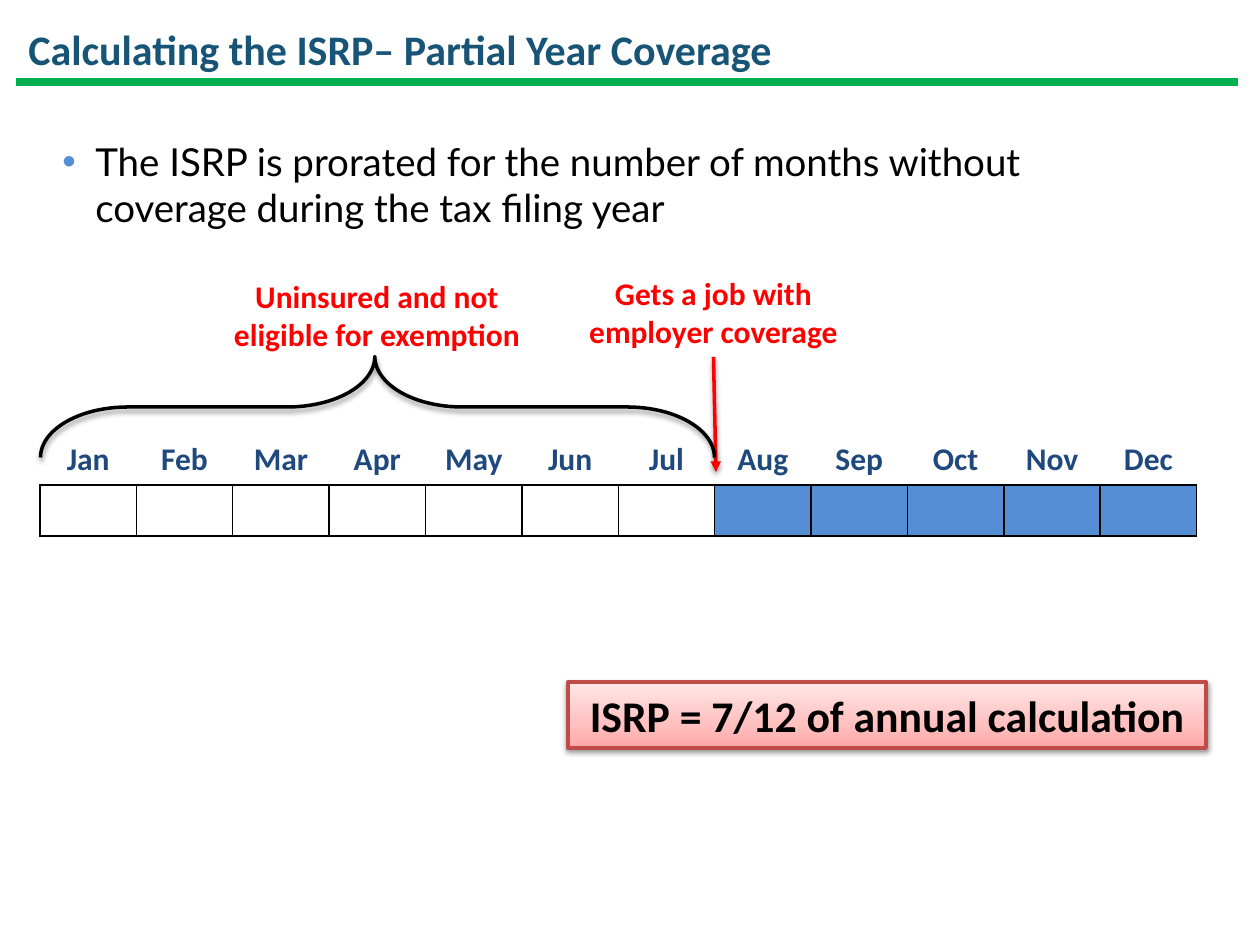
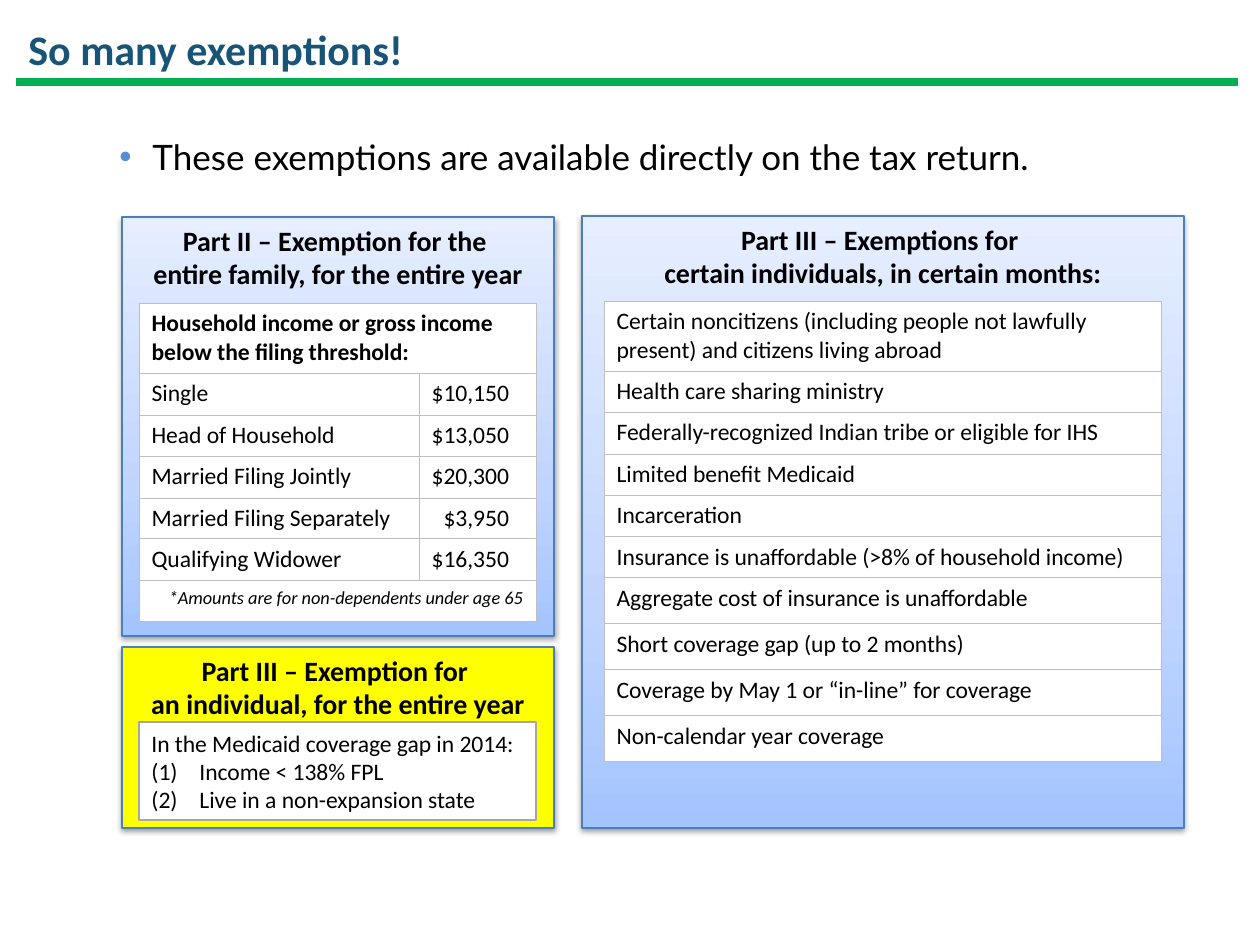
from dataclasses import dataclass

from lxml.etree import SubElement
from pptx import Presentation
from pptx.dml.color import RGBColor
from pptx.enum.shapes import MSO_CONNECTOR as Line, MSO_SHAPE as Preset
from pptx.enum.text import MSO_ANCHOR as Anchor, PP_ALIGN as Align
from pptx.oxml.ns import qn
from pptx.util import Pt

EMU_PER_PX = 914400 / 126


@dataclass(frozen=True)
class Type:
    size: float
    color: str = "000000"
    bold: bool = False
    italic: bool = False
    font: str = "Calibri"


@dataclass(frozen=True)
class Theme:
    title = Type(24, "175475", bold=True)
    lead = Type(22, font="Lato")
    short_lead = Type(20, font="Lato")
    month = Type(18, "1F497D", bold=True)
    caption = Type(18, "FF0000", bold=True)
    result = Type(25, bold=True)
    heading = Type(16, bold=True)
    entry = Type(13.5)
    entry_bold = Type(13.5, bold=True)
    footnote = Type(10.5, italic=True)
    rule = "00B050"
    bullet = "558ED5"
    bullet_font = "Arial"
    covered = "558ED5"
    ink = "000000"
    arrow = "FF0000"
    white = "FFFFFF"
    yellow = "FFFF00"
    panel_line = "4B7EBC"
    note_line = "A6A6A6"
    grid = "BFBFBF"
    result_line = "BF4C48"
    red_fade = ((0, "FFA6A5"), (35, "FFC0BF"), (100, "FFE7E7"))
    blue_fade = ((0, "A4C4FF"), (35, "BFD4FF"), (100, "E6EEFF"))


THEME = Theme()
MONTHS = "Jan Feb Mar Apr May Jun Jul Aug Sep Oct Nov Dec".split()
UNINSURED_MONTHS = 7
THRESHOLDS = [
    ("Single", "$10,150"),
    ("Head of Household", "$13,050"),
    ("Married Filing Jointly", "$20,300"),
    ("Married Filing Separately", "$3,950"),
    ("Qualifying Widower", "$16,350"),
]
MONTHLY_EXEMPTIONS = [
    "Certain noncitizens (including people not lawfully present) and citizens living abroad",
    "Health care sharing ministry",
    "Federally-recognized Indian tribe or eligible for IHS",
    "Limited benefit Medicaid",
    "Incarceration",
    "Insurance is unaffordable (>8% of household income)",
    "Aggregate cost of insurance is unaffordable",
    "Short coverage gap (up to 2 months)",
    "Coverage by May 1 or “in-line” for coverage",
    "Non-calendar year coverage",
]


def px(*lengths):
    emus = [round(length * EMU_PER_PX) for length in lengths]
    return emus if len(emus) > 1 else emus[0]


def rgb(color):
    return RGBColor.from_string(color)


def write(frame, lines, style, align=Align.LEFT, anchor=Anchor.TOP):
    frame.word_wrap = True
    frame.vertical_anchor = anchor
    for index, line in enumerate(lines):
        paragraph = frame.add_paragraph() if index else frame.paragraphs[0]
        paragraph.text = line
        paragraph.alignment = align
        font = paragraph.font
        font.name, font.size = style.font, Pt(style.size)
        font.bold, font.italic = style.bold, style.italic
        font.color.rgb = rgb(style.color)


def write_cell(cell, line, style, align=Align.LEFT, anchor=Anchor.TOP):
    write(cell.text_frame, [line], style, align)
    cell.vertical_anchor = anchor


def hang(paragraph, indent, *marks):
    """Give a paragraph a hanging indent; each mark is a bullet tag and its attributes."""
    properties = paragraph._p.get_or_add_pPr()
    properties.set("marL", str(px(indent)))
    properties.set("indent", str(-px(indent)))
    for position, (tag, attributes) in enumerate(marks):
        properties.insert(position, properties.makeelement(qn(tag), attributes))


def set_shadow(shape, visible=True):
    effects = SubElement(shape.element.spPr, qn("a:effectLst"))
    if visible:
        shadow = SubElement(effects, qn("a:outerShdw"), blurRad=str(Pt(3.1)),
                            dist=str(Pt(1.6)), dir="5400000", rotWithShape="0")
        color = SubElement(shadow, qn("a:srgbClr"), val=THEME.ink)
        SubElement(color, qn("a:alpha"), val="38000")


def fade(shape, stops):
    """Fill from bottom to top through (percent, colour) stops."""
    shape.fill.gradient()
    shape.fill.gradient_angle = 90
    stop_list = shape.element.spPr.find(".//" + qn("a:gsLst"))
    stop_list.clear()
    for percent, color in stops:
        stop = SubElement(stop_list, qn("a:gs"), pos=str(percent * 1000))
        SubElement(stop, qn("a:srgbClr"), val=color)


def add_text(slide, box, lines, style, align=Align.LEFT, anchor=Anchor.TOP):
    area = slide.shapes.add_textbox(*px(*box))
    write(area.text_frame, lines, style, align, anchor)
    return area


def add_lead(slide, box, line, style):
    paragraph = add_text(slide, box, [line], style).text_frame.paragraphs[0]
    hang(paragraph, 33, ("a:buClr", {}), ("a:buFont", {"typeface": THEME.bullet_font}),
         ("a:buChar", {"char": "•"}))
    SubElement(paragraph._p.pPr.find(qn("a:buClr")), qn("a:srgbClr"), val=THEME.bullet)


def add_line(slide, start, end, color, width):
    line = slide.shapes.add_connector(Line.STRAIGHT, *px(*start, *end))
    line.line.color.rgb = rgb(color)
    line.line.width = Pt(width)
    return line


def add_panel(slide, box, fill, line, width, lines, style,
              align=Align.CENTER, anchor=Anchor.TOP, shadow=True):
    panel = slide.shapes.add_shape(Preset.RECTANGLE, *px(*box))
    if isinstance(fill, str):
        paint(panel, fill)
    else:
        fade(panel, fill)
    panel.line.color.rgb = rgb(line)
    panel.line.width = Pt(width)
    set_shadow(panel, shadow)
    write(panel.text_frame, lines, style, align, anchor)
    return panel


def outline(cell, color, width):
    properties = cell._tc.get_or_add_tcPr()
    for side in ("a:lnL", "a:lnR", "a:lnT", "a:lnB"):
        edge = SubElement(properties, qn(side), w=str(Pt(width)))
        SubElement(SubElement(edge, qn("a:solidFill")), qn("a:srgbClr"), val=color)


def paint(area, color):
    area.fill.solid()
    area.fill.fore_color.rgb = rgb(color)


def add_grid(slide, left, top, widths, heights):
    frame = slide.shapes.add_table(len(heights), len(widths),
                                   *px(left, top, sum(widths), sum(heights)))
    table = frame.table
    table.first_row = table.horz_banding = False
    for column, width in zip(table.columns, widths):
        column.width = px(width)
    for row, height in zip(table.rows, heights):
        row.height = px(height)
    return table


def add_list_grid(slide, left, top, widths, heights):
    table = add_grid(slide, left, top, widths, heights)
    for cell in table.iter_cells():
        outline(cell, THEME.grid, 0.5)
        paint(cell, THEME.white)
    return table


def add_titled_slide(deck, title):
    slide = deck.slides.add_slide(deck.slide_layouts[6])
    set_shadow(add_line(slide, (16, 82), (1238, 82), THEME.rule, 4.75), False)
    add_text(slide, (16, 13, 1134, 72), [title], THEME.title, anchor=Anchor.MIDDLE)
    return slide


def add_year_grid(slide):
    """Add a row for month names above a row of outlined month boxes."""
    year = add_grid(slide, 40, 434, [1157 / len(MONTHS)] * len(MONTHS), [51, 51])
    for index in range(len(MONTHS)):
        outline(year.cell(1, index), THEME.ink, 1)
    for cell in year.iter_cells():
        cell.fill.background()
    return year


def add_timeline(slide):
    calendar, coverage = add_year_grid(slide), add_year_grid(slide)
    for index, month in enumerate(MONTHS):
        write_cell(calendar.cell(0, index), month, THEME.month, Align.CENTER)
        if index >= UNINSURED_MONTHS:
            paint(coverage.cell(1, index), THEME.covered)


def add_job_arrow(slide, caption):
    arrow = add_line(slide, (714, 357), (716, 472), THEME.arrow, 2)
    arrow.begin_connect(caption, 2)
    SubElement(arrow.element.spPr.find(qn("a:ln")), qn("a:tailEnd"), type="triangle")
    set_shadow(arrow)


def add_uninsured_brace(slide):
    brace = slide.shapes.add_shape(Preset.LEFT_BRACE, *px(327, 70, 101, 674))
    brace.rotation = 90
    brace.adjustments[0], brace.adjustments[1] = 0.865, 0.504
    brace.fill.background()
    brace.line.color.rgb = rgb(THEME.ink)
    brace.line.width = Pt(2)
    set_shadow(brace)


def add_threshold_table(slide):
    table = add_list_grid(slide, 139, 303, [280, 117], [70] + [42, 41] * 3)
    last = len(THRESHOLDS) + 1
    for row in (0, last):
        table.cell(row, 0).merge(table.cell(row, 1))
    write_cell(table.cell(0, 0), "Household income or gross income below the filing threshold:",
               THEME.entry_bold, anchor=Anchor.MIDDLE)
    for row, (status, amount) in enumerate(THRESHOLDS, 1):
        write_cell(table.cell(row, 0), status, THEME.entry)
        amount_cell = table.cell(row, 1)
        write_cell(amount_cell, amount, THEME.entry, Align.RIGHT)
        amount_cell.margin_left, amount_cell.margin_right = px(0, 27)
    write_cell(table.cell(last, 0), "*Amounts are for non-dependents under age 65",
               THEME.footnote, Align.RIGHT)


def add_exemption_table(slide):
    heights = [70, 41, 42, 41, 42, 41] + [46] * 4
    table = add_list_grid(slide, 604, 301, [557], heights)
    for row, exemption in enumerate(MONTHLY_EXEMPTIONS):
        write_cell(table.cell(row, 0), exemption, THEME.entry)


def build_partial_year(deck):
    slide = add_titled_slide(deck, "Calculating the ISRP– Partial Year Coverage")
    add_lead(slide, (50, 132, 1134, 110),
             "The ISRP is prorated for the number of months without coverage "
             "during the tax filing year", THEME.lead)
    add_timeline(slide)
    job = add_text(slide, (568, 268, 291, 89), ["Gets a job with employer coverage"],
                   THEME.caption, Align.CENTER)
    add_job_arrow(slide, job)
    add_text(slide, (196, 271, 362, 89), ["Uninsured and not eligible for exemption"],
             THEME.caption, Align.CENTER)
    add_panel(slide, (568, 682, 638, 66), THEME.red_fade, THEME.result_line, 2.25,
              ["ISRP = 7/12 of annual calculation"], THEME.result, anchor=Anchor.MIDDLE)
    add_uninsured_brace(slide)


def build_exemptions(deck):
    slide = add_titled_slide(deck, "So many exemptions!")
    add_lead(slide, (107, 129, 1062, 74),
             "These exemptions are available directly on the tax return.", THEME.short_lead)
    panels = [
        ((582, 216, 602, 612), THEME.blue_fade,
         ["Part III – Exemptions for ", "certain individuals, in certain months:"]),
        ((122, 217, 432, 419), THEME.blue_fade,
         ["Part II – Exemption for the ", "entire family, for the entire year"]),
        ((122, 647, 432, 181), THEME.yellow,
         ["Part III – Exemption for ", "an individual, for the entire year"]),
    ]
    for box, fill, heading in panels:
        add_panel(slide, box, fill, THEME.panel_line, 0.75, heading, THEME.heading)
    add_exemption_table(slide)
    add_threshold_table(slide)
    gap = add_panel(slide, (139, 722, 397, 98), THEME.white, THEME.note_line, 0.75,
                    ["In the Medicaid coverage gap in 2014:", "Income < 138% FPL",
                     "Live in a non-expansion state"],
                    THEME.entry, Align.LEFT, Anchor.MIDDLE, shadow=False)
    for condition in gap.text_frame.paragraphs[1:]:
        hang(condition, 48, ("a:buAutoNum", {"type": "arabicParenBoth"}))


def main():
    deck = Presentation()
    deck.slide_width, deck.slide_height = px(1260, 945)
    build_partial_year(deck)
    build_exemptions(deck)
    deck.save("out.pptx")


if __name__ == "__main__":
    main()
